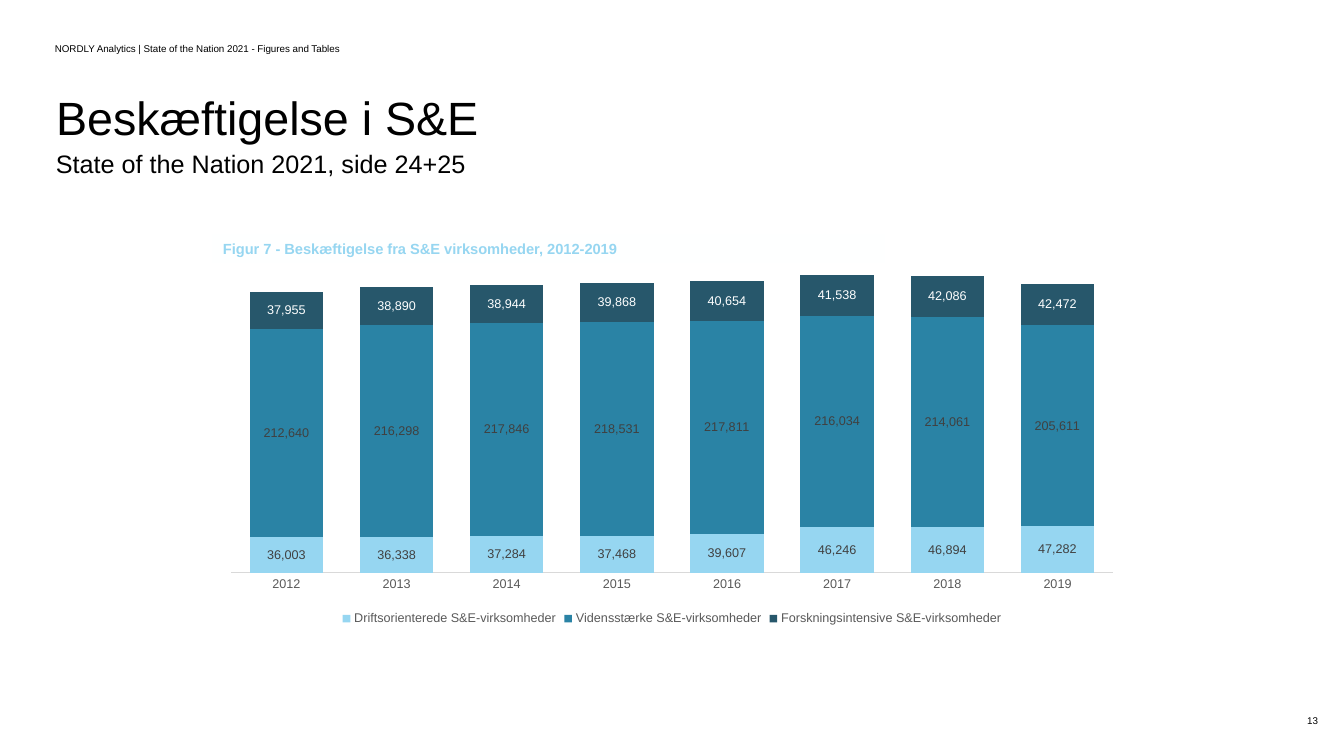
from dataclasses import dataclass

from lxml import etree
from pptx import Presentation
from pptx import util as u
from pptx.chart.data import CategoryChartData
from pptx.dml.color import RGBColor
from pptx.enum import chart as ch, shapes, text
from pptx.oxml.ns import qn

SCALE = 914400 / 100.8  # EMU in one px


@dataclass(frozen=True)
class Theme:
    font: str = "Arial"
    black: str = "000000"
    white: str = "FEFFFF"
    grey: str = "595959"
    dark: str = "404040"
    rule: str = "D9D9D9"
    sky: str = "96D6F1"
    blue: str = "2A83A5"
    navy: str = "27576B"
    small: float = 7
    label: float = 9
    base: float = 10
    caption: float = 10.5
    sub: float = 18
    title: float = 33.3


T = Theme()

YEARS = [str(year) for year in range(2012, 2020)]
# Name, fill, label colour, values
SERIES = [
    ("Driftsorienterede S&E-virksomheder", T.sky, T.dark,
     (36003, 36338, 37284, 37468, 39607, 46246, 46894, 47282)),
    ("Vidensstærke S&E-virksomheder", T.blue, T.dark,
     (212640, 216298, 217846, 218531, 217811, 216034, 214061, 205611)),
    ("Forskningsintensive S&E-virksomheder", T.navy, T.white,
     (37955, 38890, 38944, 39868, 40654, 41538, 42086, 42472)),
]


def px(num):
    return u.Emu(round(num * SCALE))


def style(font, size, color, bold=False):
    font.name = T.font
    font.size = u.Pt(size)
    font.bold = bold
    font.color.rgb = RGBColor.from_string(color)


def paint(fill, color):
    fill.solid()
    fill.fore_color.rgb = RGBColor.from_string(color)


def write(shape, words, size, color=T.black, bold=False,
          align=text.PP_ALIGN.LEFT, anchor=text.MSO_ANCHOR.MIDDLE):
    frame = shape.text_frame
    frame.text = words
    frame.word_wrap = True
    frame.auto_size = text.MSO_AUTO_SIZE.NONE
    frame.vertical_anchor = anchor
    para = frame.paragraphs[0]
    para.alignment = align
    style(para.runs[0].font, size, color, bold)
    return para


def add_text(slide, box, words, size, **look):
    shape = slide.shapes.add_textbox(*map(px, box))
    return write(shape, words, size, **look)


def add_title(slide, box, words):
    title = slide.shapes.title
    title.left, title.top, title.width, title.height = map(px, box)
    write(title, words, T.title).line_spacing = 0.8


def add_band(slide, box, words):
    band = slide.shapes.add_shape(shapes.MSO_SHAPE.RECTANGLE, *map(px, box))
    band.shadow.inherit = False
    paint(band.fill, T.white)
    band.line.fill.background()
    write(band, words, T.caption, color=T.sky, bold=True)


def place_plot(chart, **sides):
    """Fix the inner plot area, in shares of the chart."""
    area = chart._chartSpace.chart.plotArea
    for old in area.findall(qn("c:layout")):
        area.remove(old)
    layout = etree.Element(qn("c:layout"))
    area.insert(0, layout)
    manual = etree.SubElement(layout, qn("c:manualLayout"))
    parts = {"layoutTarget": "inner", "xMode": "edge", "yMode": "edge", **sides}
    for tag, val in parts.items():
        etree.SubElement(manual, qn("c:" + tag)).set("val", str(val))


def add_bars(slide, box):
    data = CategoryChartData(number_format="#,##0")
    data.categories = YEARS
    for name, _, _, vals in SERIES:
        data.add_series(name, vals)
    chart = slide.shapes.add_chart(
        ch.XL_CHART_TYPE.COLUMN_STACKED, *map(px, box), data).chart
    style(chart.font, T.base, T.black)
    chart.has_title = False
    place_plot(chart, x=0.02, y=0.02, w=0.96, h=0.84)

    # Axes
    years, scale = chart.category_axis, chart.value_axis
    years.major_tick_mark = ch.XL_TICK_MARK.NONE
    style(years.tick_labels.font, T.label, T.grey)
    paint(years.format.line.fill, T.rule)
    years.format.line.width = u.Pt(0.75)
    scale.visible = False
    scale.has_major_gridlines = False
    scale.minimum_scale, scale.maximum_scale = 0, 350000

    # Legend
    chart.has_legend = True
    chart.legend.position = ch.XL_LEGEND_POSITION.BOTTOM
    chart.legend.include_in_layout = False
    style(chart.legend.font, T.label, T.grey)

    # Columns and their labels
    plot = chart.plots[0]
    plot.gap_width, plot.overlap = 50, 100
    plot.vary_by_categories = False
    for series, (_, color, ink, _) in zip(plot.series, SERIES):
        paint(series.format.fill, color)
        labels = series.data_labels
        labels.show_value = True
        labels.number_format = "#,##0"
        labels.number_format_is_linked = False
        labels.position = ch.XL_LABEL_POSITION.CENTER
        style(labels.font, T.label, ink)


def main():
    deck = Presentation()
    deck.slide_width, deck.slide_height = px(1344), px(756)
    slide = deck.slides.add_slide(deck.slide_layouts[5])

    # Chart and its caption
    add_bars(slide, (213, 222, 918, 408))
    add_band(slide, (213, 235, 672, 28),
             "Figur 7 - Beskæftigelse fra S&E virksomheder, 2012-2019")

    # Header and page number
    add_text(slide, (45, 29, 454, 40),
             "NORDLY Analytics | State of the Nation 2021 - Figures and Tables",
             T.small)
    add_text(slide, (1026, 701, 302, 40), "13", T.small,
             align=text.PP_ALIGN.RIGHT)

    # Headings
    add_title(slide, (46, 93, 1165, 58), "Beskæftigelse i S&E")
    add_text(slide, (46, 143, 482, 40), "State of the Nation 2021, side 24+25",
             T.sub, anchor=text.MSO_ANCHOR.TOP)
    deck.save("out.pptx")


if __name__ == "__main__":
    main()
